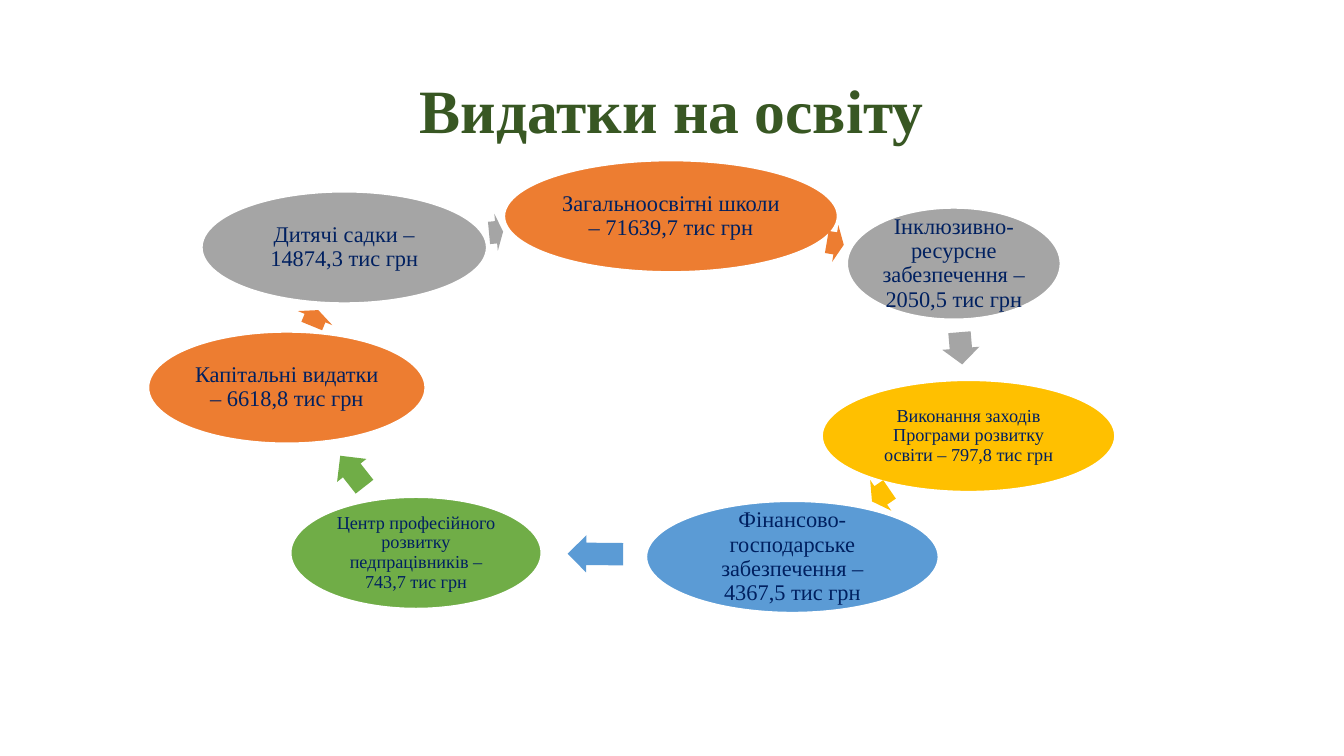
"""Builds a slide showing education spending as a ring of ellipses and arrows."""
import pptx
import pptx.util
import pptx.dml.color
import pptx.enum.shapes
import pptx.enum.text

THEME = {
    "font": "Times New Roman",
    "title": "385723", "text": "002060", "outline": "FFFFFF",
    "orange": "ED7D31", "grey": "A5A5A5", "yellow": "FFC000",
    "blue": "5B9BD5", "green": "70AD47",
    "title_size": 44, "large": 16, "small": 13, "outline_width": 1.5,
}
ELLIPSE_HEIGHT = 14.8
ARROW_HEIGHT = 4.93

deck = pptx.Presentation()
deck.slide_width = pptx.util.Inches(13.33)
deck.slide_height = pptx.util.Inches(7.5)
page = deck.slides.add_slide(deck.slide_layouts[6])


def place(center_x, center_y, width, height):
    """Turns percentages of the slide around a centre into a frame."""
    across, down = deck.slide_width / 100, deck.slide_height / 100
    return (round((center_x - width / 2) * across), round((center_y - height / 2) * down),
            round(width * across), round(height * down))


def write(box, text, *, size, color, bold=False, inset=0.02):
    """Fills a shape with one centred paragraph."""
    frame = box.text_frame
    frame.word_wrap = True
    frame.vertical_anchor = pptx.enum.text.MSO_ANCHOR.MIDDLE
    frame.margin_left = frame.margin_right = pptx.util.Inches(inset)
    frame.margin_top = frame.margin_bottom = pptx.util.Inches(inset)
    para = frame.paragraphs[0]
    para.alignment = pptx.enum.text.PP_ALIGN.CENTER
    para.line_spacing = 0.9
    span = para.add_run()
    span.text = text
    span.font.name = THEME["font"]
    span.font.size = pptx.util.Pt(THEME[size])
    span.font.bold = bold
    span.font.color.rgb = pptx.dml.color.RGBColor.from_string(THEME[color])


title = page.shapes.add_textbox(*place(50, 15, 86.27, 19.33))
write(title, "Видатки на освіту", size="title_size", color="title", bold=True, inset=0.05)

expenses = [
    ("Загальноосвітні школи – 71639,7 тис грн", "large", "orange",
     (49.92, 28.6, 24.83), (62.15, 32.2, 1.28), 9.5),
    ("Інклюзивно-ресурсне забезпечення – 2050,5 тис грн", "large", "grey",
     (70.97, 34.87, 15.9), (71.49, 46.07, 2.4), 85.2),
    ("Виконання заходів Програми розвитку освіти – 797,8 тис грн", "small", "yellow",
     (72.06, 57.67, 21.83), (65.53, 65.53, 1.58), 145.4),
    ("Фінансово-господарське забезпечення – 4367,5 тис грн", "large", "blue",
     (58.96, 73.67, 21.76), (44.3, 73.27, 4.13), 180.6),
    ("Центр професійного розвитку педпрацівників – 743,7 тис грн", "small", "green",
     (30.95, 73.13, 18.68), (26.22, 62.33, 2.93), 231.9),
    ("Капітальні видатки – 6618,8 тис грн", "large", "orange",
     (21.34, 51.27, 20.63), (23.44, 42.07, 1.28), 292.2),
    ("Дитячі садки – 14874,3 тис грн", "large", "grey",
     (25.62, 32.73, 21.23), (36.91, 30.73, 1.05), 354.6),
]

for label, size, color, ellipse_place, arrow_place, angle in expenses:
    ellipse = page.shapes.add_shape(
        pptx.enum.shapes.MSO_SHAPE.OVAL, *place(*ellipse_place, ELLIPSE_HEIGHT))
    ellipse.line.color.rgb = pptx.dml.color.RGBColor.from_string(THEME["outline"])
    ellipse.line.width = pptx.util.Pt(THEME["outline_width"])
    write(ellipse, label, size=size, color="text")

    arrow = page.shapes.add_shape(
        pptx.enum.shapes.MSO_SHAPE.RIGHT_ARROW, *place(*arrow_place, ARROW_HEIGHT))
    arrow.adjustments[0] = 0.6
    arrow.adjustments[1] = 0.5
    arrow.rotation = angle
    arrow.line.fill.background()

    for shape in (ellipse, arrow):
        shape.shadow.inherit = False
        shape.fill.solid()
        shape.fill.fore_color.rgb = pptx.dml.color.RGBColor.from_string(THEME[color])

deck.save("out.pptx")
